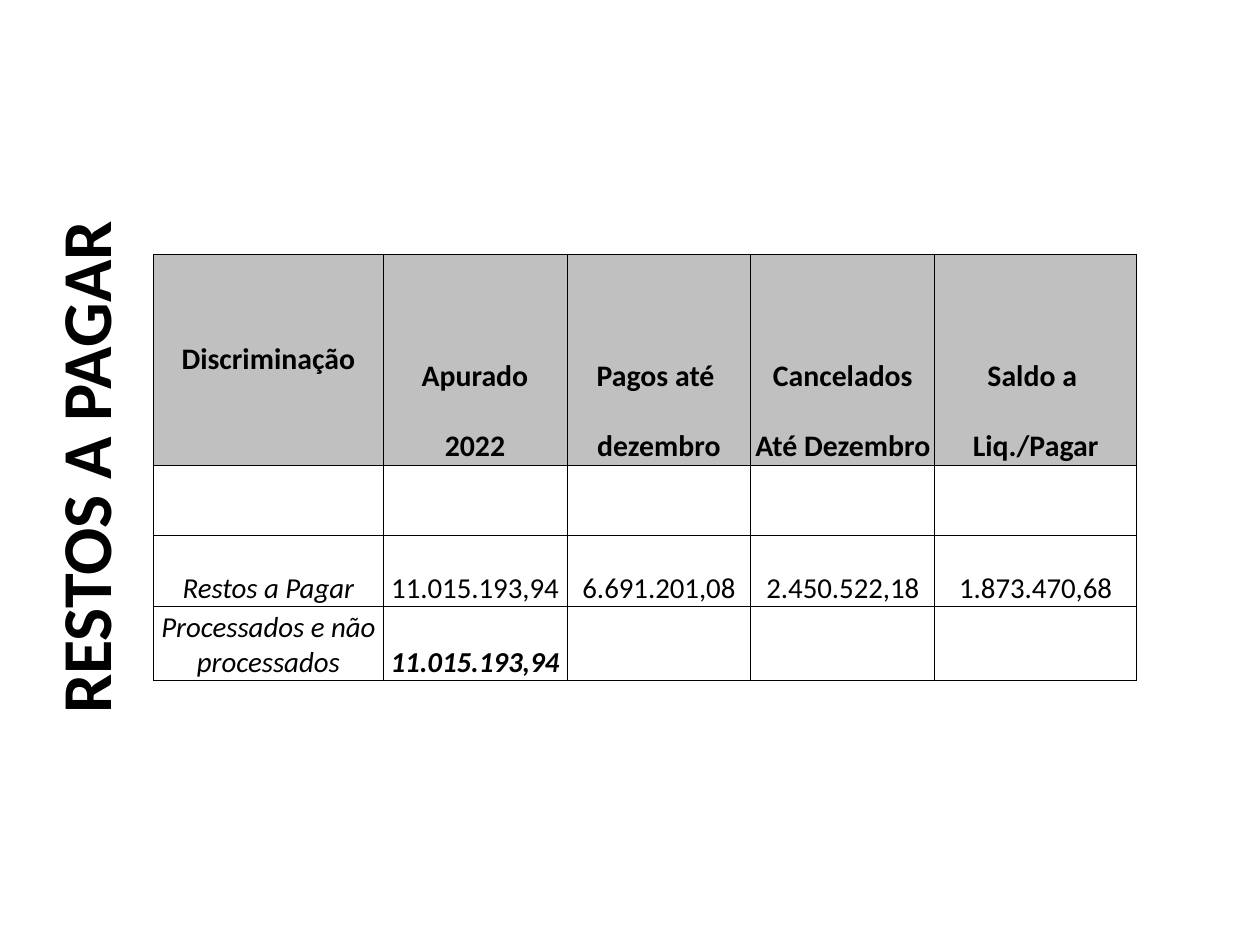
from pptx import Presentation
from pptx import util as u
from pptx.dml.color import RGBColor
from pptx.enum import text as t
from pptx.oxml.ns import qn
from lxml import etree

TITLE = "RESTOS A PAGAR"
ROWS = [
    ["Discriminação", "Apurado", "Pagos até ", "Cancelados", "Saldo a "],
    ["", "2022", "dezembro", "Até Dezembro", "Liq./Pagar"],
    [""] * 5,
    ["Restos a Pagar", "11.015.193,94", "6.691.201,08", "2.450.522,18", "1.873.470,68"],
    ["Processados e não processados", "11.015.193,94", "", "", ""],
]
HEAD = 2  # header rows
COLS = [1.82, 1.46, 1.46, 1.46, 1.6]
TALL = [1.11, 0.56, 0.56, 0.56, 0.59]
THEME = dict(font="Calibri", ink="000000", head="C0C0C0", paper="FFFFFF",
             title=40, label=17, body=16.5, thin=0.5, thick=1)


def write(frame, words, size, bold=False, italic=False):
    para = frame.paragraphs[0]
    para.alignment = t.PP_ALIGN.CENTER
    if not words:
        return
    run = para.add_run()
    run.text = words
    font = run.font
    font.name, font.size = THEME["font"], u.Pt(size)
    font.bold, font.italic = bold, italic
    font.color.rgb = RGBColor.from_string(THEME["ink"])


def border(cell, side, width):
    """Draw one cell edge; a width of 0 hides it."""
    props = cell._tc.get_or_add_tcPr()
    line = etree.SubElement(props, qn(f"a:ln{side}"), w=str(u.Pt(width)))
    if width:
        fill = etree.SubElement(line, qn("a:solidFill"))
        etree.SubElement(fill, qn("a:srgbClr"), val=THEME["ink"])
    else:
        etree.SubElement(line, qn("a:noFill"))


def edges(row, col):
    """Thick outer frame, thin inner grid, no line inside the header."""
    thin, thick = THEME["thin"], THEME["thick"]
    split = col > 0
    return {
        "L": thick if col == 0 else thin,
        "R": thick if col == len(COLS) - 1 else thin,
        "T": thick if row == 0 else 0 if row == 1 and split else thin,
        "B": thick if row == len(ROWS) - 1 else 0 if row == 0 and split else thin,
    }


def add_title(slide):
    """Add the upward title as a text box, since a title placeholder ignores vert."""
    box = slide.shapes.add_textbox(
        u.Inches(0.28), u.Inches(0.52), u.Inches(1.18), u.Inches(6.38))
    frame = box.text_frame
    frame.word_wrap = True
    frame.vertical_anchor = t.MSO_ANCHOR.TOP
    frame._txBody.bodyPr.set("vert", "vert270")
    write(frame, TITLE, THEME["title"], bold=True)


def add_grid(slide):
    grid = slide.shapes.add_table(
        len(ROWS), len(COLS), u.Inches(1.22), u.Inches(2.02),
        u.Inches(sum(COLS)), u.Inches(sum(TALL))).table
    for col, width in zip(grid.columns, COLS):
        col.width = u.Inches(width)
    for row, tall in zip(grid.rows, TALL):
        row.height = u.Inches(tall)
    grid.cell(0, 0).merge(grid.cell(HEAD - 1, 0))

    for r, row in enumerate(ROWS):
        for c, words in enumerate(row):
            cell = grid.cell(r, c)
            head, last = r < HEAD, r == len(ROWS) - 1
            cell.margin_left = cell.margin_right = 0
            cell.margin_top = cell.margin_bottom = 0
            cell.vertical_anchor = (t.MSO_ANCHOR.MIDDLE if head and c == 0
                                    else t.MSO_ANCHOR.BOTTOM)
            for side, width in edges(r, c).items():
                border(cell, side, width)
            cell.fill.solid()
            shade = THEME["head" if head else "paper"]
            cell.fill.fore_color.rgb = RGBColor.from_string(shade)
            write(cell.text_frame, words, THEME["label" if head else "body"],
                  bold=head or (last and c > 0),
                  italic=not head and (last or c == 0))


def main():
    deck = Presentation()
    deck.slide_width, deck.slide_height = u.Inches(10), u.Inches(7.5)
    slide = deck.slides.add_slide(deck.slide_layouts[6])
    add_title(slide)
    add_grid(slide)
    deck.save("out.pptx")


if __name__ == "__main__":
    main()
